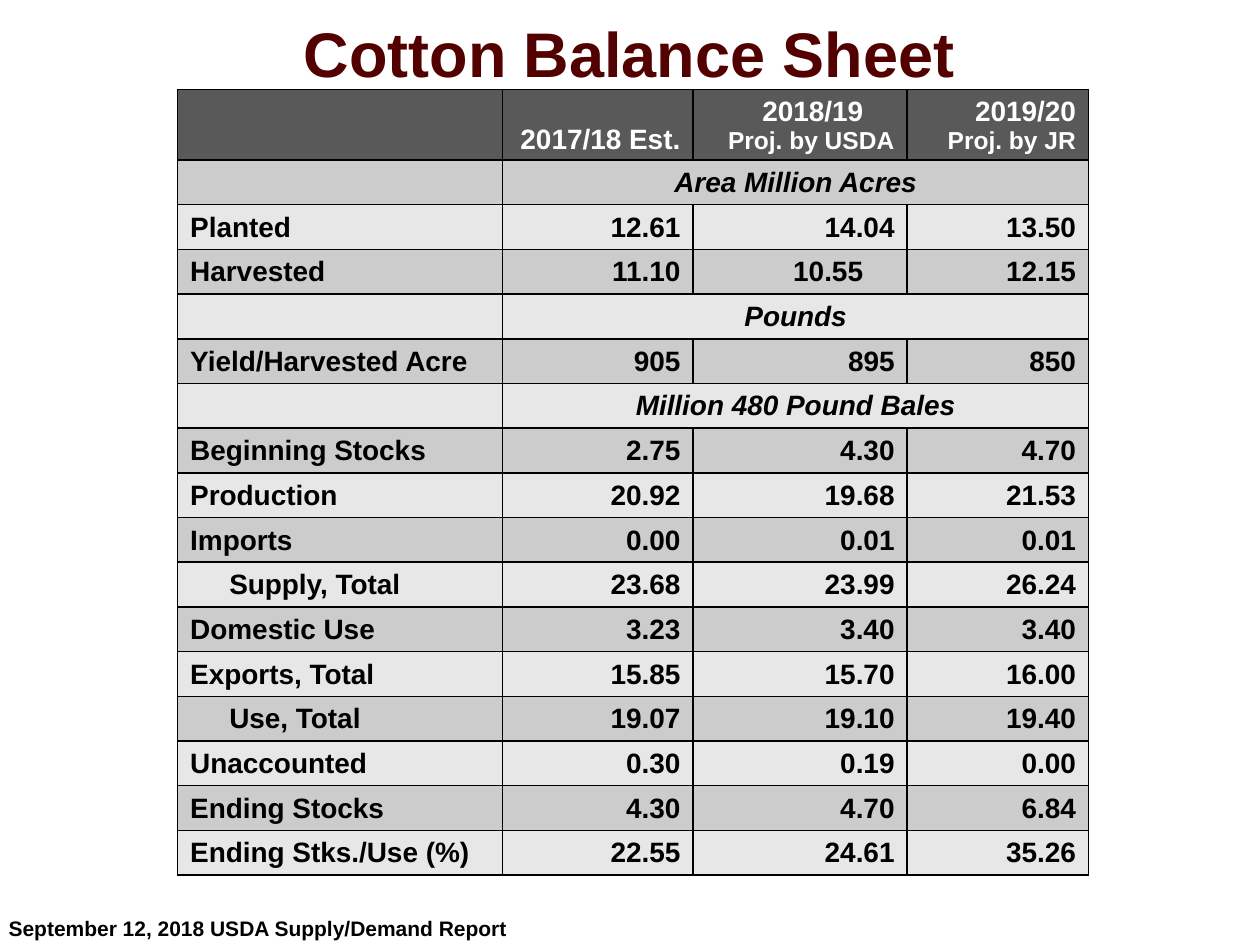
from lxml import etree
from pptx import Presentation
from pptx.dml.color import RGBColor
from pptx.enum.text import MSO_ANCHOR, PP_ALIGN
from pptx.oxml.ns import qn
from pptx.util import Inches, Pt

LEFT, CENTER, RIGHT = PP_ALIGN.LEFT, PP_ALIGN.CENTER, PP_ALIGN.RIGHT
TOP, MIDDLE, BOTTOM = MSO_ANCHOR.TOP, MSO_ANCHOR.MIDDLE, MSO_ANCHOR.BOTTOM
COLORS = {"title": "520000", "header": "595959", "dark_band": "CCCCCC",
          "light_band": "E7E7E7", "text": "000000", "header_text": "FFFFFF"}
FONT = "Arial"
BODY_SIZE, NOTE_SIZE = 16, 14
COLUMN_WIDTHS = [2.58, 1.51, 1.7, 1.44]
HEADER_HEIGHT, BODY_HEIGHT = 0.56, 5.68
HEADERS = [[], ["2017/18 Est."], ["2018/19", "Proj. by USDA"], ["2019/20", "Proj. by JR"]]
ROWS = [
    ["Area Million Acres"],
    ["Planted", "12.61", "14.04", "13.50"],
    ["Harvested", "11.10", "10.55", "12.15"],
    ["Pounds"],
    ["Yield/Harvested Acre", "905", "895", "850"],
    ["Million 480 Pound Bales"],
    ["Beginning Stocks", "2.75", "4.30", "4.70"],
    ["Production", "20.92", "19.68", "21.53"],
    ["Imports", "0.00", "0.01", "0.01"],
    ["Supply, Total", "23.68", "23.99", "26.24"],
    ["Domestic Use", "3.23", "3.40", "3.40"],
    ["Exports, Total", "15.85", "15.70", "16.00"],
    ["Use, Total", "19.07", "19.10", "19.40"],
    ["Unaccounted", "0.30", "0.19", "0.00"],
    ["Ending Stocks", "4.30", "4.70", "6.84"],
    ["Ending Stks./Use (%)", "22.55", "24.61", "35.26"],
]


def write_paragraph(paragraph, text, size, color, align=LEFT, italic=False):
    """Fill one paragraph with bold text in the slide font."""
    paragraph.text = text
    paragraph.alignment = align
    for run in paragraph.runs:
        font = run.font
        font.name, font.size, font.bold, font.italic = FONT, Pt(size), True, italic
        font.color.rgb = RGBColor.from_string(COLORS[color])


def indent(paragraph, inches):
    """Move the left edge of a paragraph inwards."""
    properties = paragraph._p.get_or_add_pPr()
    properties.set("marL", str(Inches(inches)))
    properties.set("indent", "0")


def add_text(slide, box, text, size, color, align, anchor):
    """Place a single tightly spaced line of text in a box."""
    shape = slide.shapes.add_textbox(*(Inches(value) for value in box))
    frame = shape.text_frame
    frame.word_wrap = True
    frame.vertical_anchor = anchor
    write_paragraph(frame.paragraphs[0], text, size, color, align)
    frame.paragraphs[0].line_spacing = 0.85


def style_cell(cell, fill):
    """Give a cell its borders, fill, margins, anchor and empty-text size."""
    properties = cell._tc.get_or_add_tcPr()
    for edge in ("a:lnL", "a:lnR", "a:lnT", "a:lnB"):
        line = etree.SubElement(properties, qn(edge), w=str(Pt(1)))
        solid = etree.SubElement(line, qn("a:solidFill"))
        etree.SubElement(solid, qn("a:srgbClr"), val=COLORS["text"])
    cell.fill.solid()
    cell.fill.fore_color.rgb = RGBColor.from_string(COLORS[fill])
    cell.vertical_anchor = BOTTOM
    cell.margin_top = Inches(0.02)
    cell.margin_bottom = Inches(0.04 if fill == "header" else 0.05)
    end = cell.text_frame.paragraphs[0]._p.get_or_add_endParaRPr()
    end.set("sz", str(BODY_SIZE * 100))


def fill_header(table):
    """Write the season headings and their sources."""
    for column, lines in enumerate(HEADERS):
        frame = table.cell(0, column).text_frame
        for index, line in enumerate(lines):
            paragraph = frame.add_paragraph() if index else frame.paragraphs[0]
            size = NOTE_SIZE if index else BODY_SIZE
            write_paragraph(paragraph, line, size, "header_text", RIGHT)
    season = table.cell(0, 2).text_frame.paragraphs[0]
    season.alignment = LEFT
    indent(season, 0.45)


def fill_row(table, row, values):
    """Write a section heading or a labelled row of figures."""
    if len(values) == 1:
        table.cell(row, 1).merge(table.cell(row, 3))
        heading = table.cell(row, 1).text_frame.paragraphs[0]
        write_paragraph(heading, values[0], BODY_SIZE, "text", CENTER, italic=True)
        return
    for column, value in enumerate(values):
        cell = table.cell(row, column)
        paragraph = cell.text_frame.paragraphs[0]
        write_paragraph(paragraph, value, BODY_SIZE, "text", RIGHT if column else LEFT)
        if column == 0 and value in ("Supply, Total", "Use, Total"):
            indent(paragraph, 0.31)
        if values[0] == "Harvested" and column == 2:
            cell.margin_right = Inches(0.35)


def add_balance_table(slide, left, top):
    """Place the banded balance table with its corner at left, top."""
    frame = slide.shapes.add_table(
        len(ROWS) + 1, len(COLUMN_WIDTHS), Inches(left), Inches(top),
        Inches(sum(COLUMN_WIDTHS)), Inches(HEADER_HEIGHT + BODY_HEIGHT))
    table = frame.table
    for column, width in zip(table.columns, COLUMN_WIDTHS):
        column.width = Inches(width)
    for index, row in enumerate(table.rows):
        row.height = Inches(BODY_HEIGHT / len(ROWS) if index else HEADER_HEIGHT)
        band = "dark_band" if index % 2 else "light_band"
        for cell in row.cells:
            style_cell(cell, band if index else "header")
    fill_header(table)
    for index, values in enumerate(ROWS, start=1):
        fill_row(table, index, values)


def main():
    """Build the cotton balance slide."""
    presentation = Presentation()
    presentation.slide_width, presentation.slide_height = Inches(10), Inches(7.5)
    slide = presentation.slides.add_slide(presentation.slide_layouts[6])
    add_text(slide, (0.16, -0.06, 9.67, 1.05), "Cotton Balance Sheet",
             36, "title", CENTER, MIDDLE)
    add_balance_table(slide, 1.41, 0.71)
    add_text(slide, (-0.03, 7.25, 4.23, 0.27),
             "September 12, 2018 USDA Supply/Demand Report", 12, "text", LEFT, TOP)
    presentation.save("out.pptx")


if __name__ == "__main__":
    main()
